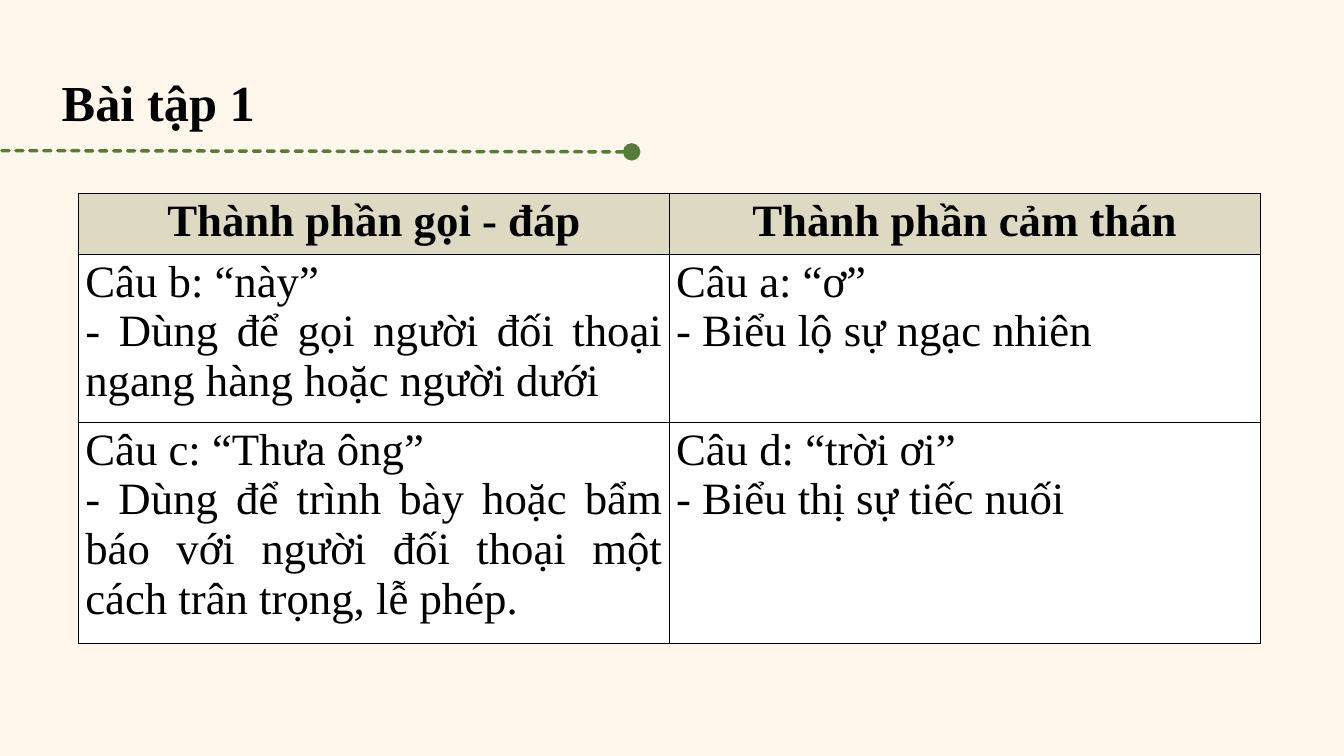
"""Builds the exercise slide comparing two kinds of isolated sentence components."""
from lxml import etree
from pptx import Presentation
from pptx.dml.color import RGBColor
from pptx.enum.shapes import MSO_CONNECTOR
from pptx.enum.text import MSO_ANCHOR, PP_ALIGN
from pptx.oxml.ns import qn
from pptx.util import Inches, Pt

STRAIGHT = MSO_CONNECTOR.STRAIGHT
MIDDLE = MSO_ANCHOR.MIDDLE
CENTER, JUSTIFY = PP_ALIGN.CENTER, PP_ALIGN.JUSTIFY

FONT = "Times New Roman"
COLORS = {
    "background": "FFF7EC",
    "rule": "547D39",
    "text": "000000",
    "border": "000000",
    "header": "DDD9C3",
    "body": "FFFFFF",
}
ROWS = [
    ["Thành phần gọi - đáp", "Thành phần cảm thán"],
    [
        "Câu b: “này”\n- Dùng để gọi người đối thoại ngang hàng hoặc người dưới",
        "Câu a: “ơ”\n- Biểu lộ sự ngạc nhiên",
    ],
    [
        "Câu c: “Thưa ông”\n- Dùng để trình bày hoặc bẩm báo với người đối thoại "
        "một cách trân trọng, lễ phép.",
        "Câu d: “trời ơi”\n- Biểu thị sự tiếc nuối",
    ],
]


class SlideBuilder:
    """Holds the style and the current slide."""

    def __init__(self, page):
        self.page = page
        self.paint(page.background.fill, "background")

    def color(self, name):
        return RGBColor.from_string(COLORS[name])

    def paint(self, fill, name):
        fill.solid()
        fill.fore_color.rgb = self.color(name)

    def set_text(self, frame, text, size, align, bold):
        frame.text = text
        for para in frame.paragraphs:
            para.alignment = align
            for span in para.runs:
                span.font.name = FONT
                span.font.size = Pt(size)
                span.font.bold = bold
                span.font.color.rgb = self.color("text")

    def title(self, text, left, top, width, height):
        box = self.page.shapes.add_textbox(
            Inches(left), Inches(top), Inches(width), Inches(height)
        )
        box.text_frame.word_wrap = True
        box.text_frame.vertical_anchor = MIDDLE
        self.set_text(box.text_frame, text, 54, JUSTIFY, True)

    def dashed_rule(self, start, end):
        rule = self.page.shapes.add_connector(
            STRAIGHT, *(Inches(value) for value in (*start, *end))
        )
        rule.line.color.rgb = self.color("rule")
        rule.line.width = Pt(3.75)
        properties = rule.element.spPr
        line = properties.find(qn("a:ln"))
        line.set("cap", "rnd")
        etree.SubElement(line, qn("a:prstDash"), val="sysDash")
        for tag in ("a:headEnd", "a:tailEnd"):
            etree.SubElement(line, qn(tag), type="oval", w="lg", len="lg")
        etree.SubElement(properties, qn("a:effectLst"))

    def borders(self, cell):
        properties = cell._tc.get_or_add_tcPr()
        for side in ("a:lnL", "a:lnR", "a:lnT", "a:lnB"):
            line = etree.SubElement(properties, qn(side), w=str(Pt(1)))
            fill = etree.SubElement(line, qn("a:solidFill"))
            etree.SubElement(fill, qn("a:srgbClr"), val=COLORS["border"])

    def table(self, rows, left, top, width, height, row_height):
        frame = self.page.shapes.add_table(
            len(rows), len(rows[0]),
            Inches(left), Inches(top), Inches(width), Inches(height),
        )
        for row, texts in zip(frame.table.rows, rows):
            row.height = Inches(row_height)
            header = texts is rows[0]
            for cell, text in zip(row.cells, texts):
                self.borders(cell)
                self.paint(cell.fill, "header" if header else "body")
                align = CENTER if header else JUSTIFY
                self.set_text(cell.text_frame, text, 48, align, header)
        frame.height = Inches(height)


def main():
    deck = Presentation()
    deck.slide_width, deck.slide_height = Inches(20), Inches(11.25)
    builder = SlideBuilder(deck.slides.add_slide(deck.slide_layouts[6]))
    builder.dashed_rule((-0.5, 2.24), (9.4, 2.26))
    builder.title("Bài tập 1", 0.82, 0.88, 10.09, 1.25)
    builder.table(ROWS, 1.17, 2.88, 17.58, 6.7, 0.41)
    deck.save("out.pptx")


if __name__ == "__main__":
    main()
